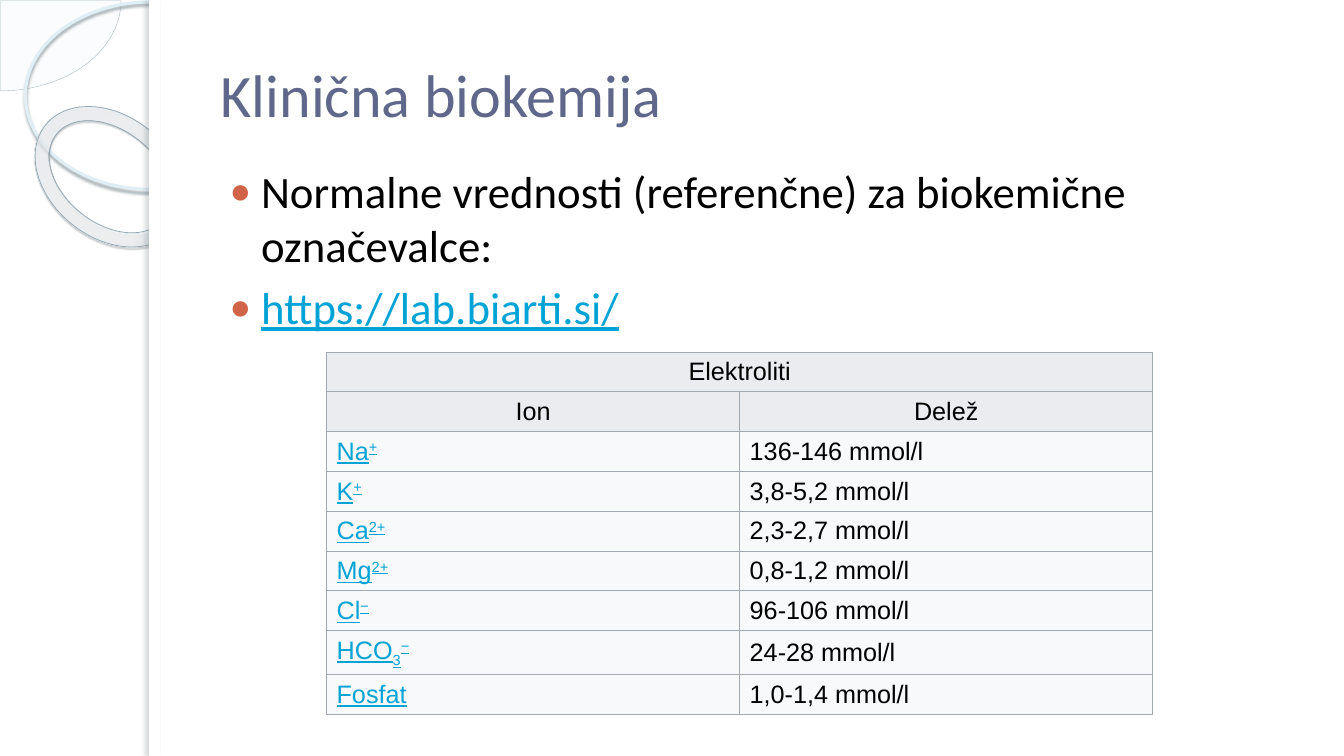
from dataclasses import dataclass

from lxml.etree import SubElement
from pptx import Presentation
from pptx.dml.color import RGBColor as RGB
from pptx.enum.shapes import MSO_SHAPE as SHAPE
from pptx.enum.text import MSO_ANCHOR as ANCHOR, PP_ALIGN as ALIGN
from pptx.oxml import parse_xml
from pptx.oxml.ns import nsdecls, qn
from pptx.util import Cm, Pt


@dataclass(frozen=True)
class Theme:
    title: str = "5F688B"
    text: str = "000000"
    link: str = "00A3D6"
    bullet: str = "D16349"
    paper: str = "FFFFFF"
    border: str = "A2A9B1"
    head: str = "EAECF0"
    body: str = "F8F9FA"
    heading_font: str = "Calibri"
    table_font: str = "Arial"
    title_size: int = 43
    body_size: int = 32
    table_size: int = 18


T = Theme()
SUP, SUB = 30, -25
IONS = [
    ([("Na", 0), ("+", SUP)], "136-146 mmol/l"),
    ([("K", 0), ("+", SUP)], "3,8-5,2 mmol/l"),
    ([("Ca", 0), ("2+", SUP)], "2,3-2,7 mmol/l"),
    ([("Mg", 0), ("2+", SUP)], "0,8-1,2 mmol/l"),
    ([("Cl", 0), ("−", SUP)], "96-106 mmol/l"),
    ([("HCO", 0), ("3", SUB), ("−", SUP)], "24-28 mmol/l"),
    ([("Fosfat", 0)], "1,0-1,4 mmol/l"),
]


def apply(target, values):
    for name, value in values.items():
        setattr(target, name, value)


def add_run(p, text, size, font, color, underline=False, baseline=0):
    r = p.add_run()
    r.text = text
    apply(r.font, {"size": Pt(size), "name": font, "underline": underline})
    r.font.color.rgb = RGB.from_string(color)
    if baseline:
        r.font._element.set("baseline", str(baseline * 1000))


def add_text_box(s, left, top, width, height, anchor):
    tf = s.shapes.add_textbox(Cm(left), Cm(top), Cm(width), Cm(height)).text_frame
    apply(tf, {"word_wrap": True, "vertical_anchor": anchor})
    return tf


def set_bullet(p):
    pPr = p._p.get_or_add_pPr()
    apply_indent = {"marL": Cm(1.02), "indent": Cm(-0.79)}
    for name, value in apply_indent.items():
        pPr.set(name, str(value))
    SubElement(SubElement(pPr, qn("a:buClr")), qn("a:srgbClr"), val=T.bullet)
    SubElement(pPr, qn("a:buSzPct"), val="80000")
    SubElement(pPr, qn("a:buFont"), typeface=T.table_font)
    SubElement(pPr, qn("a:buChar"), char="●")


def set_alpha(parent, percent):
    color = next(parent.iter(qn("a:srgbClr")))
    SubElement(color, qn("a:alpha"), val=str(percent * 1000))


def set_shadow(sp, color, alpha, blur, dist, angle):
    effects = sp._element.spPr.find(qn("a:effectLst"))
    outer = SubElement(effects, qn("a:outerShdw"), blurRad=str(Pt(blur)),
                       dist=str(Pt(dist)), dir=str(angle * 60000),
                       algn="ctr", rotWithShape="0")
    SubElement(outer, qn("a:srgbClr"), val=color)
    set_alpha(outer, alpha)


def set_glow_gradient(sp, stops):
    """Fill with a circular gradient centred far to the right of the shape."""
    marks = "".join(
        f'<a:gs pos="{pos * 1000}"><a:srgbClr val="{color}">'
        f'<a:alpha val="{alpha * 1000}"/></a:srgbClr></a:gs>'
        for pos, color, alpha in stops)
    sp._element.spPr.insert(2, parse_xml(
        f'<a:gradFill {nsdecls("a")} rotWithShape="1"><a:gsLst>{marks}</a:gsLst>'
        '<a:path path="circle"><a:fillToRect l="-408000" t="-50000" '
        'r="508000" b="150000"/></a:path></a:gradFill>'))


def add_ornament(s, kind, box, fill=None, line=None, shadow=None, adj=()):
    sp = s.shapes.add_shape(kind, *map(Cm, box))
    sp.shadow.inherit = False
    for i, value in enumerate(adj):
        sp.adjustments[i] = value
    if isinstance(fill, list):
        set_glow_gradient(sp, fill)
    elif fill:
        sp.fill.solid()
        sp.fill.fore_color.rgb = RGB.from_string(fill)
    else:
        sp.fill.background()
    if line:
        sp.line.color.rgb = RGB.from_string(line[0])
        sp.line.width = Pt(line[1])
    else:
        sp.line.fill.background()
    if shadow:
        set_shadow(sp, *shadow)
    return sp


def add_side_decoration(s):
    pie = add_ornament(s, SHAPE.PIE, (-3.02, -2.26, 6.07, 4.55), "F4F8FA",
                       ("A1B6C0", 0.25), adj=(0, 54.02))
    set_alpha(pie._element.spPr, 33)
    add_ornament(s, SHAPE.OVAL, (0.64, 0.05, 6.3, 4.72), None,
                 ("E0EEF6", 2.15), ("8E9CA2", 85, 2, 2, 90))
    ring = add_ornament(s, SHAPE.DONUT, (0.69, 2.92, 4.17, 3.07),
                        [(0, "F7FAFC", 70), (70, "FBFDFE", 55), (100, "98C0D3", 60)],
                        ("95AAB5", 0.58), ("454E52", 35, 1, 1.2, 75), (0.118,))
    ring.rotation = 38.6
    add_ornament(s, SHAPE.RECTANGLE, (3.76, 0, 30.11, 19.05), T.paper)
    add_ornament(s, SHAPE.RECTANGLE, (3.76, 0, 0.28, 19.05), T.paper,
                 shadow=("61686B", 25, 3, 3, 180))


def add_title(s, text):
    tf = add_text_box(s, 5.31, 0.76, 27.79, 3.18, ANCHOR.MIDDLE)
    add_run(tf.paragraphs[0], text, T.title_size, T.heading_font, T.title)


def add_bullets(s, items):
    tf = add_text_box(s, 5.31, 4.01, 27.79, 13.34, ANCHOR.TOP)
    for i, (text, color, underline) in enumerate(items):
        p = tf.add_paragraph() if i else tf.paragraphs[0]
        set_bullet(p)
        if i:
            p.space_before = Pt(6)
        add_run(p, text, T.body_size, T.heading_font, color, underline)


def style_cell(cell, color):
    apply(cell, {"vertical_anchor": ANCHOR.MIDDLE,
                 "margin_top": Cm(0.12), "margin_bottom": Cm(0.12)})
    cell.fill.solid()
    cell.fill.fore_color.rgb = RGB.from_string(color)
    tcPr = cell._tc.get_or_add_tcPr()
    for i, side in enumerate("LRTB"):
        tcPr.insert(i, parse_xml(
            f'<a:ln{side} {nsdecls("a")} w="{Pt(0.75)}"><a:solidFill>'
            f'<a:srgbClr val="{T.border}"/></a:solidFill></a:ln{side}>'))


def add_ion_table(s):
    heads = [["Elektroliti", ""], ["Ion", "Delež"]]
    count = len(heads) + len(IONS)
    row_height = Cm(0.97)
    table = s.shapes.add_table(count, 2, Cm(8.23), Cm(8.87), Cm(20.82),
                               row_height * count).table
    apply(table, {"first_row": False, "horz_banding": False})
    for i, row in enumerate(table.rows):
        row.height = row_height
        for cell in row.cells:
            style_cell(cell, T.head if i < len(heads) else T.body)
    table.cell(0, 0).merge(table.cell(0, 1))
    for i, texts in enumerate(heads):
        for j, text in enumerate(filter(None, texts)):
            p = table.cell(i, j).text_frame.paragraphs[0]
            p.alignment = ALIGN.CENTER
            add_run(p, text, T.table_size, T.table_font, T.text)
    for i, (ion, share) in enumerate(IONS, len(heads)):
        name, value = (c.text_frame.paragraphs[0] for c in table.rows[i].cells)
        for text, baseline in ion:
            add_run(name, text, T.table_size, T.table_font, T.link, True, baseline)
            if baseline == SUB:
                table.rows[i].height = Cm(1.06)
        add_run(value, share, T.table_size, T.table_font, T.text)


def main():
    prs = Presentation()
    apply(prs, {"slide_width": Cm(33.87), "slide_height": Cm(19.05)})
    s = prs.slides.add_slide(prs.slide_layouts[6])
    add_side_decoration(s)
    add_title(s, "Klinična biokemija")
    add_bullets(s, [
        ("Normalne vrednosti (referenčne) za biokemične označevalce:", T.text, False),
        ("https://lab.biarti.si/", T.link, True),
    ])
    add_ion_table(s)
    prs.save("out.pptx")


if __name__ == "__main__":
    main()
